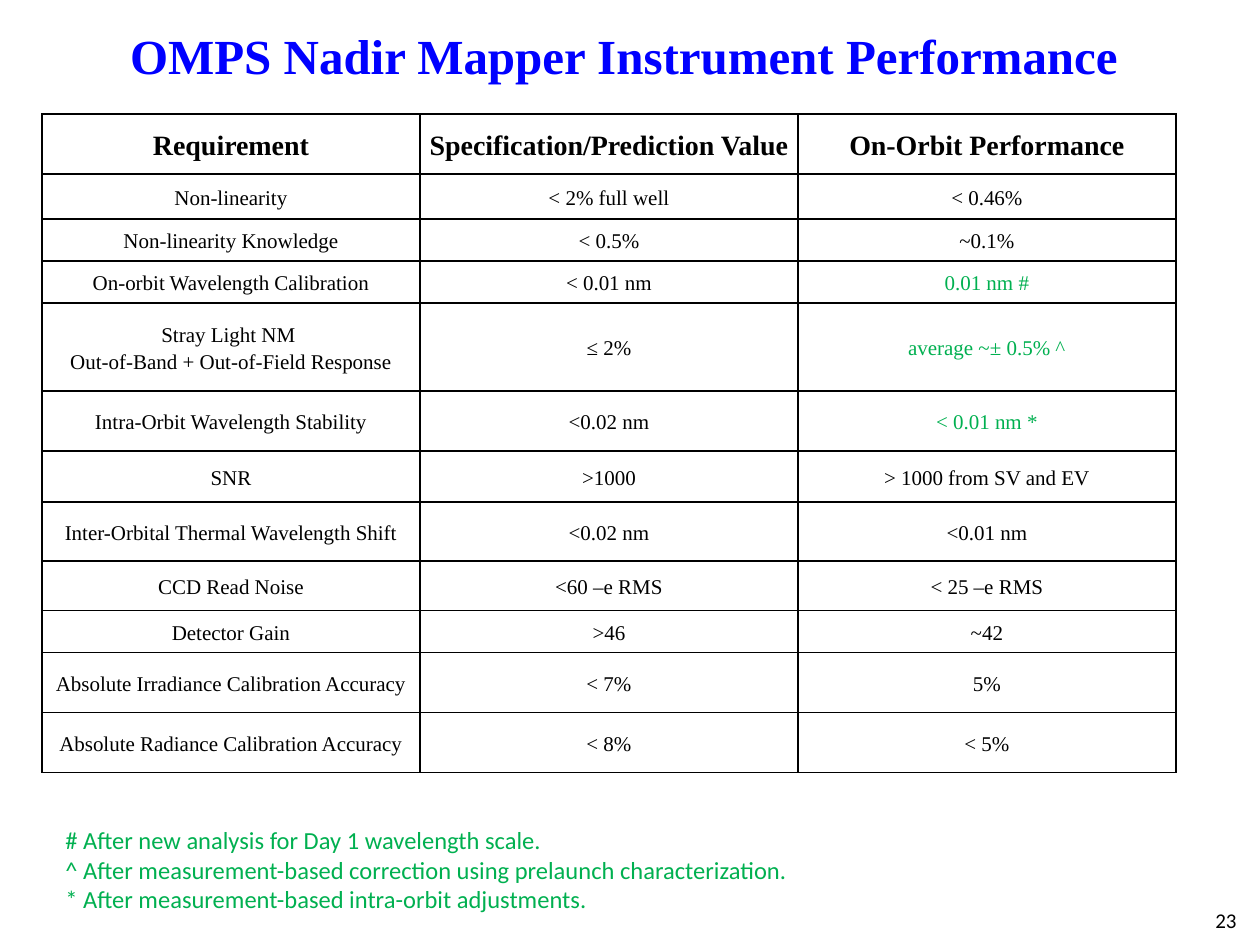
from dataclasses import dataclass

import pptx
import pptx.dml.color
import pptx.enum.text
import pptx.oxml
import pptx.oxml.ns
import pptx.util

EMU_PER_PX = 914400 // 126
ALIGN = pptx.enum.text.PP_ALIGN
ANCHOR = pptx.enum.text.MSO_ANCHOR


@dataclass(frozen=True)
class Theme:
    serif: str = "Times New Roman"
    sans: str = "Calibri"
    blue: str = "0000FF"
    green: str = "00B050"
    black: str = "000000"
    title_size: int = 28
    header_size: int = 16
    note_size: int = 14
    body_size: int = 12
    border_width: int = 1


HEADERS = ["Requirement", "Specification/Prediction Value", "On-Orbit Performance"]
# height in px, requirement, specification, on-orbit performance
REQUIREMENTS = [
    (45, "Non-linearity", "< 2% full well", "< 0.46%"),
    (42, "Non-linearity Knowledge", "< 0.5%", "~0.1%"),
    (42, "On-orbit Wavelength Calibration", "< 0.01 nm", "0.01 nm #"),
    (88, "Stray Light NM \nOut-of-Band + Out-of-Field Response", "≤ 2%", "average ~± 0.5% ^"),
    (60, "Intra-Orbit Wavelength Stability", "<0.02 nm", "< 0.01 nm *"),
    (51, "SNR", ">1000", "> 1000 from SV and EV"),
    (59, "Inter-Orbital Thermal Wavelength Shift", "<0.02 nm", "<0.01 nm"),
    (50, "CCD Read Noise", "<60 –e RMS", "< 25 –e RMS"),
    (42, "Detector Gain", ">46", "~42"),
    (60, "Absolute Irradiance Calibration Accuracy", "< 7%", "5%"),
    (60, "Absolute Radiance Calibration Accuracy", "< 8%", "< 5%"),
]
HEADER_HEIGHT = 60
COLUMN_WIDTH = 378
NOTE_MARKS = ("#", "^", "*")
NOTES = [
    "# After new analysis for Day 1 wavelength scale.",
    "^ After measurement-based correction using prelaunch characterization.",
    "* After measurement-based intra-orbit adjustments.",
]


def px(length):
    return pptx.util.Emu(length * EMU_PER_PX)


class SlideBuilder:
    def __init__(self, slide, theme):
        self.slide = slide
        self.theme = theme

    def set_text(self, text_frame, text, font, size, color, align, bold=False):
        text_frame.text = text
        for paragraph in text_frame.paragraphs:
            paragraph.alignment = align
            for run in paragraph.runs:
                run.font.name = font
                run.font.size = pptx.util.Pt(size)
                run.font.bold = bold
                run.font.color.rgb = pptx.dml.color.RGBColor.from_string(color)

    def title(self, left, top, width, height, text):
        shape = self.slide.shapes.title
        shape.left, shape.top = px(left), px(top)
        shape.width, shape.height = px(width), px(height)
        shape.text_frame.vertical_anchor = ANCHOR.MIDDLE
        self.set_text(shape.text_frame, text, self.theme.serif, self.theme.title_size,
                      self.theme.blue, ALIGN.CENTER, bold=True)

    def text(self, left, top, width, height, text, size, color,
             align=ALIGN.LEFT, anchor=ANCHOR.TOP):
        shape = self.slide.shapes.add_textbox(px(left), px(top), px(width), px(height))
        shape.text_frame.word_wrap = True
        shape.text_frame.vertical_anchor = anchor
        self.set_text(shape.text_frame, text, self.theme.sans, size, color, align)

    def border(self, cell):
        """Draw a solid line on all four sides of a cell."""
        properties = cell._tc.get_or_add_tcPr()
        width = pptx.util.Pt(self.theme.border_width)
        for index, side in enumerate(("lnL", "lnR", "lnT", "lnB")):
            properties.insert(index, pptx.oxml.parse_xml(
                f'<a:{side} {pptx.oxml.ns.nsdecls("a")} w="{width}"><a:solidFill>'
                f'<a:srgbClr val="{self.theme.black}"/></a:solidFill></a:{side}>'))

    def cell(self, cell, text, header):
        theme = self.theme
        cell.margin_left = cell.margin_right = px(9)
        cell.margin_top = cell.margin_bottom = 0
        cell.vertical_anchor = ANCHOR.MIDDLE
        cell.fill.background()
        self.border(cell)
        color = theme.green if text.endswith(NOTE_MARKS) else theme.black
        size = theme.header_size if header else theme.body_size
        self.set_text(cell.text_frame, text, theme.serif, size, color, ALIGN.CENTER, header)
        for paragraph in cell.text_frame.paragraphs:
            paragraph.line_spacing = 1.15
            paragraph.space_after = pptx.util.Pt(10 if header else 0)

    def table(self, left, top, column_width, rows):
        """Add a table from rows of (height, cell text, ...), the first being the header."""
        column_count = len(rows[0]) - 1
        table = self.slide.shapes.add_table(
            len(rows), column_count, px(left), px(top),
            px(column_width * column_count), px(sum(row[0] for row in rows))).table
        table.first_row = table.horz_banding = False
        for column in table.columns:
            column.width = px(column_width)
        for row_index, (height, *texts) in enumerate(rows):
            table.rows[row_index].height = px(height)
            for column_index, text in enumerate(texts):
                self.cell(table.cell(row_index, column_index), text, row_index == 0)


def main():
    presentation = pptx.Presentation()
    presentation.slide_width, presentation.slide_height = px(1260), px(945)
    theme = Theme()
    title_only = presentation.slide_layouts[5]
    builder = SlideBuilder(presentation.slides.add_slide(title_only), theme)
    builder.title(63, 16, 1134, 78, "OMPS Nadir Mapper Instrument Performance ")
    builder.table(42, 114, COLUMN_WIDTH, [(HEADER_HEIGHT, *HEADERS), *REQUIREMENTS])
    builder.text(53, 819, 819, 95, "\n".join(NOTES), theme.note_size, theme.green)
    builder.text(955, 895, 294, 50, "23", theme.body_size, theme.black,
                 ALIGN.RIGHT, ANCHOR.MIDDLE)
    presentation.save("out.pptx")


if __name__ == "__main__":
    main()
